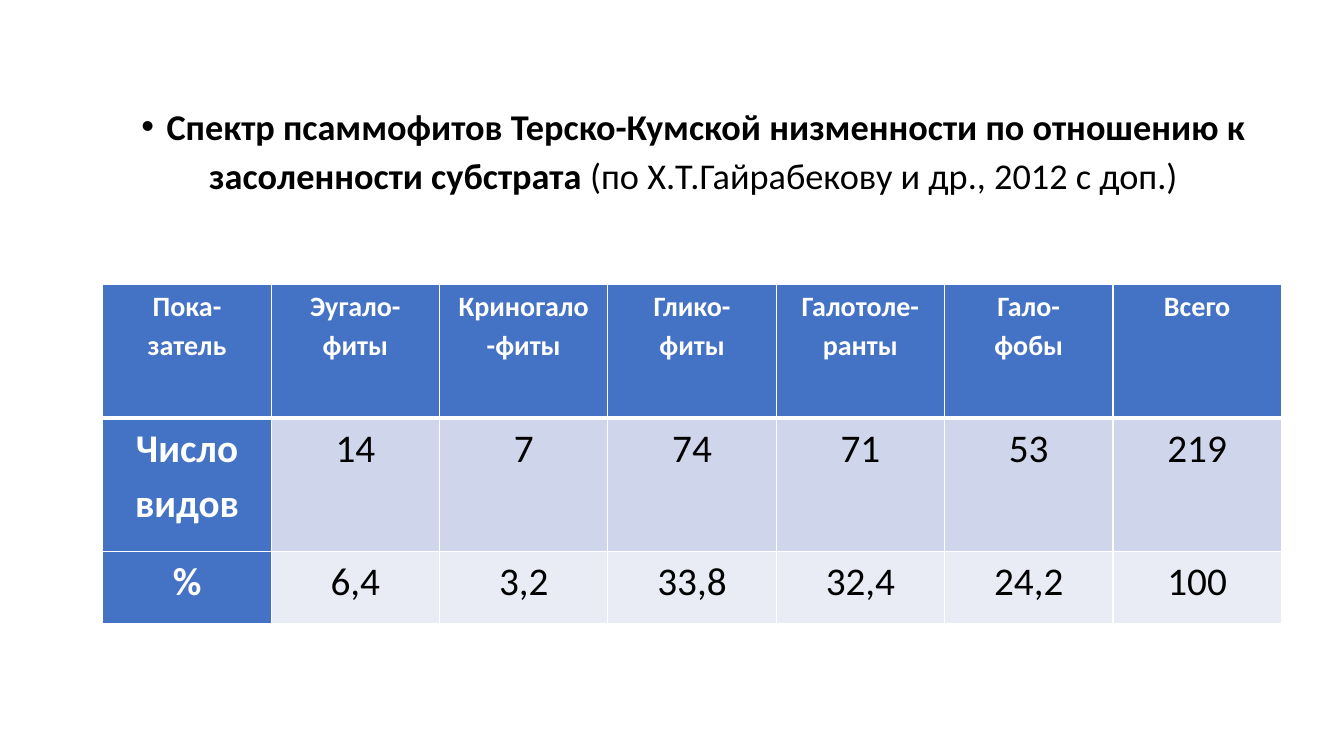
from dataclasses import dataclass

from lxml import etree
from pptx import Presentation
from pptx.dml.color import RGBColor
from pptx.enum.text import MSO_ANCHOR, PP_ALIGN
from pptx.oxml.ns import qn
from pptx.slide import Slide
from pptx.table import _Cell as Cell
from pptx.text.text import Font
from pptx.util import Inches, Pt

COLORS = {
    "white": "FFFFFF",
    "black": "000000",
    "header": "4472C4",
    "count_band": "CFD5EA",
    "percent_band": "E9EBF5",
}
FONT_NAME = "Calibri"
COLUMN_WIDTH = 1.67


@dataclass(frozen=True)
class SpectrumRow:
    height: float
    size: float
    band: str
    texts: tuple[str, ...]


@dataclass(frozen=True)
class TitleLine:
    bold: str
    plain: str = ""
    bulleted: bool = False


TITLE_LINES = (
    TitleLine("Спектр псаммофитов Терско-Кумской низменности по отношению к", bulleted=True),
    TitleLine("засоленности субстрата", " (по Х.Т.Гайрабекову и др., 2012 с доп.)"),
)
ROWS = (
    SpectrumRow(1.33, 20, "header", (
        "Пока-\nзатель", "Эугало-\nфиты", "Криногало\n-фиты", "Глико-\nфиты",
        "Галотоле-\nранты", "Гало-\nфобы", "Всего")),
    SpectrumRow(1.32, 28, "count_band", (
        "Число\nвидов", "14", "7", "74", "71", "53", "219")),
    SpectrumRow(0.72, 28, "percent_band", (
        "%", "6,4", "3,2", "33,8", "32,4", "24,2", "100")),
)


def rgb(color: str) -> RGBColor:
    return RGBColor.from_string(COLORS[color])


def style_font(font: Font, size: float, color: str, bold: bool) -> None:
    font.name = FONT_NAME
    font.size = Pt(size)
    font.bold = bold
    font.color.rgb = rgb(color)


def add_title(slide: Slide) -> None:
    title = slide.shapes.add_textbox(Inches(1.13), Inches(1.07), Inches(11.5), Inches(0.99))
    title.fill.solid()
    title.fill.fore_color.rgb = rgb("white")
    text_frame = title.text_frame
    text_frame.word_wrap = True
    text_frame.vertical_anchor = MSO_ANCHOR.TOP
    for index, line in enumerate(TITLE_LINES):
        paragraph = text_frame.add_paragraph() if index else text_frame.paragraphs[0]
        paragraph.alignment = PP_ALIGN.CENTER
        paragraph.line_spacing = 0.8
        paragraph.space_before = Pt(10 if index else 0)
        if line.bulleted:
            properties = paragraph._p.get_or_add_pPr()
            properties.set("marL", str(Inches(0.25)))
            properties.set("indent", str(Inches(-0.25)))
            etree.SubElement(properties, qn("a:buFont"), typeface="Arial")
            etree.SubElement(properties, qn("a:buChar"), char="•")
        for text, bold in ((line.bold, True), (line.plain, False)):
            if text:
                run = paragraph.add_run()
                run.text = text
                style_font(run.font, 25.9, "black", bold)


def set_borders(cell: Cell, top: float, bottom: float) -> None:
    """Draw white borders in points; the left and right ones are 1 point wide."""
    properties = cell._tc.get_or_add_tcPr()
    for side, width in (("L", 1), ("R", 1), ("T", top), ("B", bottom)):
        border = etree.SubElement(properties, qn(f"a:ln{side}"), w=str(Pt(width)))
        fill = etree.SubElement(border, qn("a:solidFill"))
        etree.SubElement(fill, qn("a:srgbClr"), val=COLORS["white"])


def fill_cell(cell: Cell, text: str, size: float, band: str, is_header: bool) -> None:
    cell.margin_left = cell.margin_right = Inches(0.07)
    cell.margin_top = cell.margin_bottom = 0
    cell.vertical_anchor = MSO_ANCHOR.TOP
    cell.fill.solid()
    cell.fill.fore_color.rgb = rgb("header" if is_header else band)
    cell.text_frame.text = text
    for paragraph in cell.text_frame.paragraphs:
        paragraph.alignment = PP_ALIGN.CENTER
        paragraph.line_spacing = 1.15
        for run in paragraph.runs:
            style_font(run.font, size, "white" if is_header else "black", is_header)


def add_spectrum_table(slide: Slide) -> None:
    column_count = len(ROWS[0].texts)
    table = slide.shapes.add_table(
        len(ROWS), column_count, Inches(1.02), Inches(2.82),
        Inches(COLUMN_WIDTH * column_count), Inches(sum(row.height for row in ROWS)),
    ).table
    table.first_col = True
    for column in table.columns:
        column.width = Inches(COLUMN_WIDTH)
    for row_index, row in enumerate(ROWS):
        table.rows[row_index].height = Inches(row.height)
        for column_index, text in enumerate(row.texts):
            cell = table.cell(row_index, column_index)
            set_borders(cell, top=3 if row_index == 1 else 1, bottom=3 if row_index == 0 else 1)
            fill_cell(cell, text, row.size, row.band, row_index == 0 or column_index == 0)


def main() -> None:
    presentation = Presentation()
    presentation.slide_width = Inches(13.33)
    presentation.slide_height = Inches(7.5)
    slide = presentation.slides.add_slide(presentation.slide_layouts[6])
    add_title(slide)
    add_spectrum_table(slide)
    presentation.save("out.pptx")


if __name__ == "__main__":
    main()
